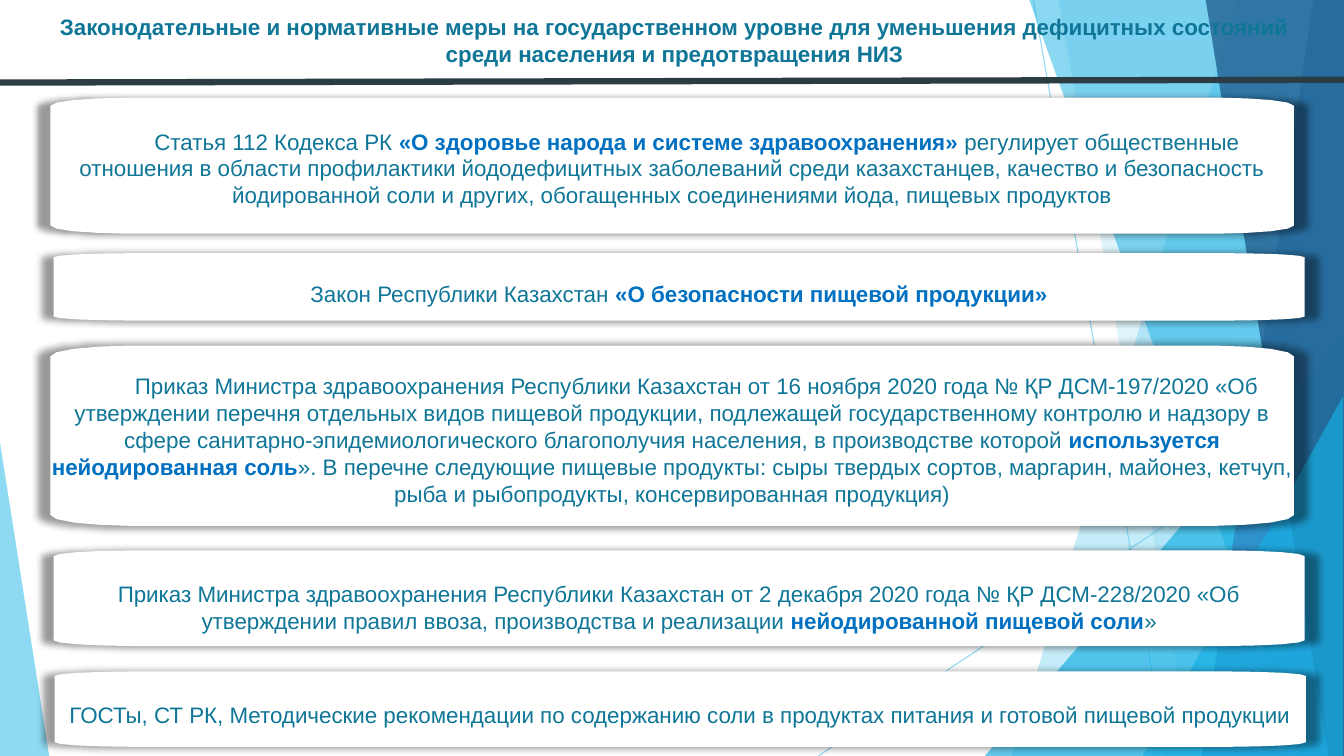
from pptx import Presentation
from pptx.dml.color import RGBColor
from pptx.enum.shapes import MSO_CONNECTOR as Connector, MSO_SHAPE as Preset
from pptx.enum.text import MSO_ANCHOR as Anchor, MSO_AUTO_SIZE as AutoSize, PP_ALIGN as Align
from pptx.oxml.ns import qn
from pptx.util import Cm, Pt
from lxml.etree import SubElement

WHITE = RGBColor(0xFF, 0xFF, 0xFF)
BLACK = RGBColor(0x00, 0x00, 0x00)
TEAL = RGBColor(0x0F, 0x76, 0x98)
EMPHASIS = RGBColor(0x00, 0x70, 0xC0)
SLATE = RGBColor(0x2C, 0x3C, 0x43)
SKY = RGBColor(0x5F, 0xCB, 0xEF)
CYAN = RGBColor(0x17, 0xB0, 0xE4)
BLUE = RGBColor(0x2E, 0x83, 0xC3)
NAVY = RGBColor(0x22, 0x62, 0x92)

WIDTH, HEIGHT = 33.87, 19.05
CORNER = [(0, 1), (0.08, 0.62), (0.3, 0.3), (0.61, 0.1), (1, 0)]

TITLE = ("Законодательные и нормативные меры на государственном уровне для уменьшения "
         "дефицитных состояний среди населения и предотвращения НИЗ")

BANDS = [
    (31.19, 25.5, SKY, 36),
    (26.67, 30.05, SKY, 20),
    (25.93, 32.79, CYAN, 50),
    (33.1, 30.28, BLUE, 70),
    (30.38, 33.48, NAVY, 80),
]

MEASURES = [
    ((1.27, 2.46, 31.34, 3.43), 0.76, 1.24, [
        ("Статья 112 Кодекса РК ", False),
        ("«О здоровье народа и системе здравоохранения» ", True),
        ("регулирует общественные отношения в области профилактики йододефицитных "
         "заболеваний среди казахстанцев, качество и безопасность йодированной соли и "
         "других, обогащенных соединениями йода, пищевых продуктов", False)]),
    ((1.35, 6.38, 31.53, 1.7), 0.68, 0, [
        ("Закон Республики Казахстан ", False),
        ("«О безопасности пищевой продукции»", True)]),
    ((1.27, 8.71, 31.34, 4.54), 0.68, 1.24, [
        ("Приказ Министра здравоохранения Республики Казахстан от 16 ноября 2020 года "
         "№ ҚР ДСМ-197/2020 «Об утверждении перечня отдельных видов пищевой продукции, "
         "подлежащей государственному контролю и надзору в сфере "
         "санитарно-эпидемиологического благополучия населения, в производстве которой ", False),
        ("используется нейодированная соль", True),
        ("». В перечне следующие пищевые продукты: сыры твердых сортов, маргарин, майонез, "
         "кетчуп, рыба и рыбопродукты, консервированная продукция)", False)]),
    ((1.35, 13.87, 31.53, 2.41), 0.76, 0, [
        ("Приказ Министра здравоохранения Республики Казахстан от 2 декабря 2020 года "
         "№ ҚР ДСМ-228/2020 «Об утверждении правил ввоза, производства и реализации ", False),
        ("нейодированной пищевой соли", True),
        ("»", False)]),
    ((1.38, 16.92, 31.53, 1.9), 0.76, 0, [
        ("ГОСТы, СТ РК, Методические рекомендации по содержанию соли в продуктах питания "
         "и готовой пищевой продукции", False)]),
]


class SlideBuilder:
    font_name = "Arial"
    font_size = Pt(16)

    def __init__(self, slide):
        self.slide = slide
        self.shapes = slide.shapes

    def set_alpha(self, shape, percent):
        for color in shape._element.spPr.iter(qn("a:srgbClr")):
            SubElement(color, qn("a:alpha")).set("val", str(percent * 1000))

    def paint(self, shape, color, alpha=100):
        shape.fill.solid()
        shape.fill.fore_color.rgb = color
        shape.line.fill.background()
        shape.shadow.inherit = False
        if alpha < 100:
            self.set_alpha(shape, alpha)

    def line(self, start, end, color, weight, alpha=100):
        rule = self.shapes.add_connector(
            Connector.STRAIGHT, *(Cm(value) for value in (*start, *end)))
        rule.line.color.rgb = color
        rule.line.width = Pt(weight)
        if alpha < 100:
            self.set_alpha(rule, alpha)
        SubElement(rule._element.spPr, qn("a:effectLst"))

    def polygon(self, points, color, alpha=100):
        corners = [(Cm(x), Cm(y)) for x, y in points]
        outline = self.shapes.build_freeform(*corners[0], scale=1.0)
        outline.add_line_segments(corners[1:], close=True)
        shape = outline.convert_to_shape()
        self.paint(shape, color, alpha)
        return shape

    def band(self, top_x, bottom_x, color, alpha):
        self.polygon([(top_x, -0.03), (WIDTH, -0.03), (WIDTH, HEIGHT), (bottom_x, HEIGHT)],
                     color, alpha)

    def triangle(self, box, apex, color, alpha):
        wedge = self.shapes.add_shape(Preset.ISOSCELES_TRIANGLE, *(Cm(value) for value in box))
        wedge.adjustments[0] = apex
        self.paint(wedge, color, alpha)

    def style(self, run, color, bold):
        run.font.name = self.font_name
        run.font.size = self.font_size
        run.font.color.rgb = color
        run.font.bold = bold

    def title(self, text, box):
        heading = self.shapes.title
        heading.left, heading.top, heading.width, heading.height = (Cm(value) for value in box)
        self.shapes._spTree.append(heading._element)
        frame = heading.text_frame
        frame.text = text
        frame.word_wrap = True
        frame.auto_size = AutoSize.SHAPE_TO_FIT_TEXT
        frame.vertical_anchor = Anchor.TOP
        paragraph = frame.paragraphs[0]
        paragraph.alignment = Align.CENTER
        self.style(paragraph.runs[0], TEAL, True)

    def shade(self, shape):
        effects = shape._element.spPr.find(qn("a:effectLst"))
        shadow = SubElement(effects, qn("a:outerShdw"), blurRad=str(Pt(5)),
                            sx="102000", sy="102000", algn="ctr", rotWithShape="0")
        color = SubElement(shadow, qn("a:srgbClr"), val=str(BLACK))
        SubElement(color, qn("a:alpha"), val="40000")

    def card(self, box, text_top, indent, parts):
        left, top, width, height = box
        right, bottom = left + width, top + height
        curve = [(x * width * 0.0625, y * height * 0.06) for x, y in CORNER]
        shape = self.polygon(
            [(left + x, top + y) for x, y in curve]
            + [(right - x, top + y) for x, y in reversed(curve)]
            + [(right - x, bottom - y) for x, y in curve]
            + [(left + x, bottom - y) for x, y in reversed(curve)], WHITE)
        self.shade(shape)
        frame = shape.text_frame
        frame.word_wrap = True
        frame.vertical_anchor = Anchor.TOP
        frame.margin_left = frame.margin_right = frame.margin_bottom = 0
        frame.margin_top = Cm(text_top)
        paragraph = frame.paragraphs[0]
        paragraph.alignment = Align.CENTER
        paragraph._p.get_or_add_pPr().set("indent", str(Cm(indent)))
        for text, emphasized in parts:
            run = paragraph.add_run()
            run.text = text
            self.style(run, EMPHASIS if emphasized else TEAL, emphasized)


def main():
    deck = Presentation()
    deck.slide_width, deck.slide_height = Cm(WIDTH), Cm(HEIGHT)
    builder = SlideBuilder(deck.slides.add_slide(deck.slide_layouts[5]))

    builder.line((26.04, 0), (29.41, HEIGHT), SKY, 0.75, 70)
    builder.line((WIDTH, 10.24), (20.62, HEIGHT), SKY, 0.75, 70)
    for band in BANDS[:2]:
        builder.band(*band)
    builder.triangle((24.82, 8.46, 9.04, 10.59), 1, CYAN, 66)
    for band in BANDS[2:]:
        builder.band(*band)
    builder.triangle((28.8, 9.98, 5.05, 9.07), 1, CYAN, 66)
    builder.triangle((0, 11.15, 1.24, 7.9), 0, SKY, 70)

    builder.line((0, 2.08), (WIDTH, 2.01), SLATE, 4.5)
    builder.title(TITLE, (1.14, 0.2, 31.72, 1.63))
    for measure in MEASURES:
        builder.card(*measure)
    deck.save("out.pptx")


if __name__ == "__main__":
    main()
